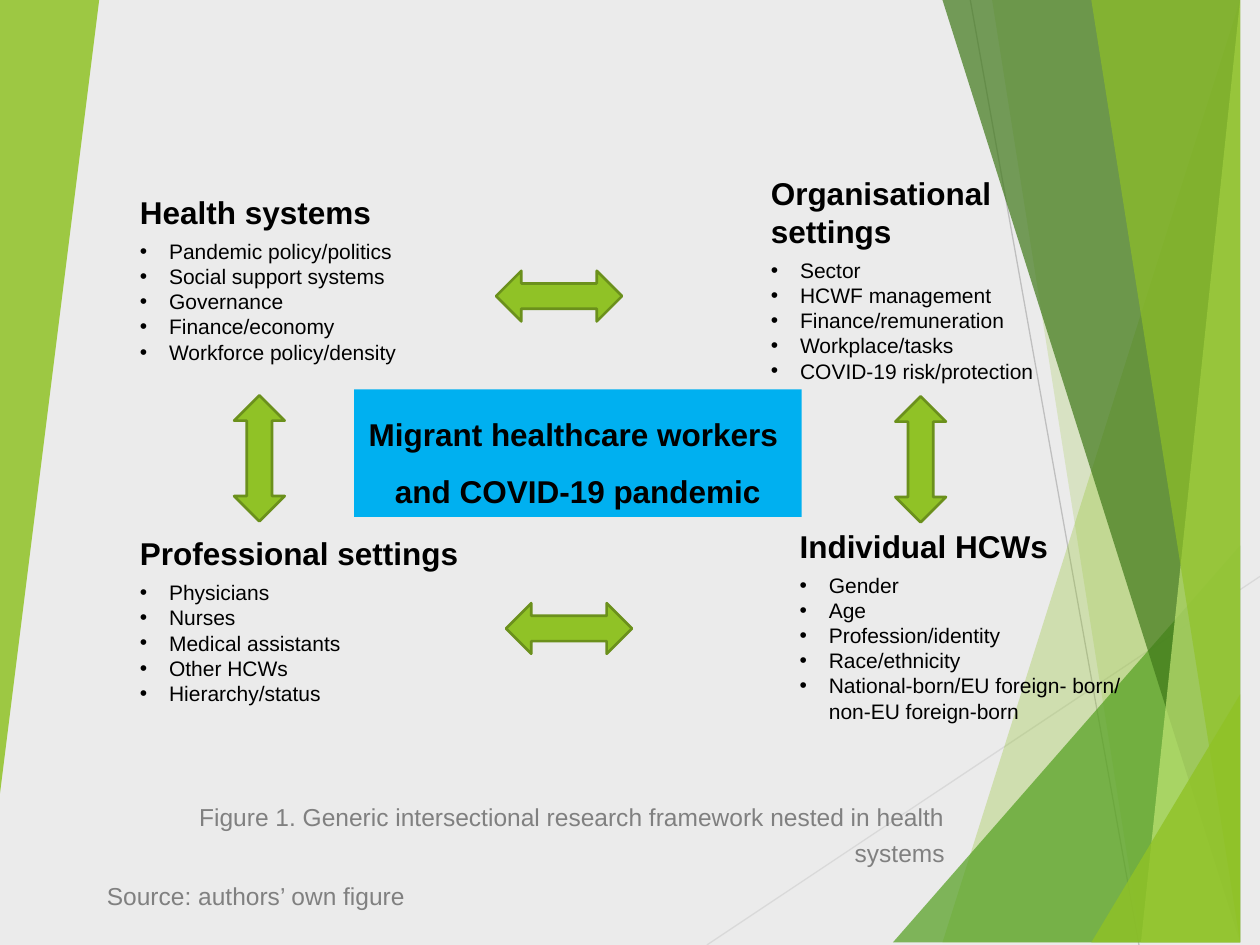
"""Build the slide showing the framework for migrant healthcare workers."""
import dataclasses

import lxml.etree
import pptx
import pptx.dml.color
import pptx.enum.shapes
import pptx.enum.text
import pptx.oxml.ns
import pptx.util

Cm = pptx.util.Cm
Pt = pptx.util.Pt
RGBColor = pptx.dml.color.RGBColor
SHAPE = pptx.enum.shapes.MSO_SHAPE
ALIGN = pptx.enum.text.PP_ALIGN
qn = pptx.oxml.ns.qn

WIDTH, HEIGHT = 25.4, 19.05


@dataclasses.dataclass(frozen=True)
class Theme:
    font: str = "Arial"
    heading_size: int = 18
    caption_size: int = 14
    list_size: int = 12
    line_width: float = 1.5
    hairline_width: float = 0.75
    background: str = "EBEBEB"
    text: str = "000000"
    caption: str = "808080"
    centre: str = "00B0F0"
    green: str = "90C226"
    green_outline: str = "6B901C"
    leaf: str = "54A021"
    forest: str = "3F7819"
    lime: str = "C0E474"
    light_line: str = "D9D9D9"
    mid_line: str = "BFBFBF"


class SlideBuilder:
    def __init__(self, slide, theme):
        self.slide = slide
        self.theme = theme
        self.decoration = slide.shapes.add_group_shape()
        slide.background.fill.solid()
        slide.background.fill.fore_color.rgb = RGBColor.from_string(theme.background)

    def paint(self, shape, color, opacity=100, outline=None):
        shape.shadow.inherit = False
        shape.fill.solid()
        shape.fill.fore_color.rgb = RGBColor.from_string(color)
        if opacity < 100:
            color_element = shape.element.spPr.find(qn("a:solidFill"))[0]
            alpha = lxml.etree.SubElement(color_element, qn("a:alpha"))
            alpha.set("val", str(opacity * 1000))
        if outline:
            shape.line.color.rgb = RGBColor.from_string(outline)
            shape.line.width = Pt(self.theme.line_width)
        else:
            shape.line.fill.background()

    def hairline(self, start, end, color):
        line = self.decoration.shapes.add_connector(
            pptx.enum.shapes.MSO_CONNECTOR.STRAIGHT, *map(Cm, start + end))
        line.line.color.rgb = RGBColor.from_string(color)
        line.line.width = Pt(self.theme.hairline_width)
        lxml.etree.SubElement(line.element.spPr, qn("a:effectLst"))

    def facet(self, points, color, opacity):
        builder = self.decoration.shapes.build_freeform(*points[0], scale=Cm(1))
        builder.add_line_segments(points[1:], close=True)
        self.paint(builder.convert_to_shape(), color, opacity)

    def add_text(self, paragraph, text, size, color, bold=False, **formats):
        run = paragraph.add_run()
        run.text = text
        font_formats = {"name": self.theme.font, "size": Pt(size), "bold": bold}
        for target, values in ((run.font, font_formats), (paragraph, formats)):
            for name, value in values.items():
                setattr(target, name, value)
        run.font.color.rgb = RGBColor.from_string(color)

    def bullet(self, paragraph):
        properties = paragraph._p.get_or_add_pPr()
        for name, value in {"marL": Cm(0.59), "indent": -Cm(0.59)}.items():
            properties.set(name, str(int(value)))
        lxml.etree.SubElement(properties, qn("a:buFont")).set("typeface", self.theme.font)
        lxml.etree.SubElement(properties, qn("a:buChar")).set("char", "•")

    def topic(self, box, heading, items):
        frame = self.slide.shapes.add_textbox(*map(Cm, box)).text_frame
        frame.word_wrap = True
        frame.auto_size = pptx.enum.text.MSO_AUTO_SIZE.SHAPE_TO_FIT_TEXT
        theme = self.theme
        self.add_text(frame.paragraphs[0], heading, theme.heading_size, theme.text,
                      bold=True, space_after=Pt(4.5))
        for item in items:
            paragraph = frame.add_paragraph()
            self.add_text(paragraph, item, theme.list_size, theme.text)
            self.bullet(paragraph)

    def centre_box(self, box, lines):
        shape = self.slide.shapes.add_shape(SHAPE.RECTANGLE, *map(Cm, box))
        self.paint(shape, self.theme.centre)
        frame = shape.text_frame
        frame.word_wrap = False
        frame.auto_size = pptx.enum.text.MSO_AUTO_SIZE.SHAPE_TO_FIT_TEXT
        for index, line in enumerate(lines):
            paragraph = frame.add_paragraph() if index else frame.paragraphs[0]
            self.add_text(paragraph, line, self.theme.heading_size, self.theme.text,
                          bold=True, alignment=ALIGN.CENTER, line_spacing=1.5)

    def arrow(self, kind, left, top):
        size = (1.02, 2.54) if kind == SHAPE.UP_DOWN_ARROW else (2.54, 1.02)
        shape = self.slide.shapes.add_shape(kind, *map(Cm, (left, top) + size))
        self.paint(shape, self.theme.green, outline=self.theme.green_outline)

    def caption(self, box, lines):
        title, subtitle = self.slide.placeholders
        title.element.getparent().remove(title.element)
        subtitle.element.getparent().append(subtitle.element)
        for name, value in zip(("left", "top", "width", "height"), box):
            setattr(subtitle, name, Cm(value))
        frame = subtitle.text_frame
        frame.vertical_anchor = pptx.enum.text.MSO_ANCHOR.TOP
        for index, (line, alignment) in enumerate(lines):
            paragraph = frame.add_paragraph() if index else frame.paragraphs[0]
            self.add_text(paragraph, line, self.theme.caption_size, self.theme.caption,
                          alignment=alignment, line_spacing=1.2,
                          space_before=Pt(0), space_after=Pt(4.5))


def right_band(top_x, bottom_x):
    return [(top_x, 0), (bottom_x, HEIGHT), (WIDTH, HEIGHT), (WIDTH, 0)]


def right_corner(left, top):
    return [(left, HEIGHT), (WIDTH, top), (WIDTH, HEIGHT)]


def main():
    theme = Theme()
    presentation = pptx.Presentation()
    presentation.slide_width, presentation.slide_height = Cm(WIDTH), Cm(HEIGHT)
    slide = presentation.slides.add_slide(presentation.slide_layouts[0])
    builder = SlideBuilder(slide, theme)

    builder.hairline((14.25, HEIGHT), (WIDTH, 11.62), theme.light_line)
    builder.hairline((19.56, 0), (22.96, HEIGHT), theme.mid_line)
    for points, color, opacity in (
        (right_band(24.77, 19.15), theme.green, 30),
        (right_band(20.02, 23.34), theme.green, 20),
        (right_corner(18.44, 10.9), theme.leaf, 72),
        (right_band(19.48, 24.64), theme.forest, 70),
        (right_band(24.92, 23.04), theme.lime, 70),
        (right_band(22.43, 25.04), theme.green, 65),
        (right_corner(22.38, 13.59), theme.green, 80),
        ([(0, 0), (2.38, 0), (0, 15.65)], theme.green, 85),
    ):
        builder.facet(points, color, opacity)

    builder.caption((1.9, 15.93, 17.4, 2.39), (
        ("Figure 1. Generic intersectional research framework nested in health systems",
         ALIGN.RIGHT),
        ("Source: authors’ own figure", ALIGN.LEFT)))
    builder.centre_box((7.14, 7.85, 9.02, 2.57),
                       ("Migrant healthcare workers ", "and COVID-19 pandemic"))

    for box, heading, items in (
        ((15.29, 3.38, 6.86, 4.55), "Organisational settings",
         ("Sector", "HCWF management", "Finance/remuneration", "Workplace/tasks",
          "COVID-19 risk/protection")),
        ((15.87, 10.49, 7.26, 4.29), "Individual HCWs",
         ("Gender", "Age", "Profession/identity", "Race/ethnicity",
          "National-born/EU foreign- born/ non-EU foreign-born")),
        ((2.57, 3.76, 7.32, 3.76), "Health systems",
         ("Pandemic policy/politics", "Social support systems", "Governance",
          "Finance/economy", "Workforce policy/density")),
        ((2.57, 10.64, 7.04, 3.76), "Professional settings",
         ("Physicians", "Nurses", "Medical assistants", "Other HCWs", "Hierarchy/status")),
    ):
        builder.topic(box, heading, items)

    for kind, left, top in (
        (SHAPE.UP_DOWN_ARROW, 18.05, 7.99),
        (SHAPE.UP_DOWN_ARROW, 4.72, 7.97),
        (SHAPE.LEFT_RIGHT_ARROW, 10.2, 12.16),
        (SHAPE.LEFT_RIGHT_ARROW, 10, 5.46),
    ):
        builder.arrow(kind, left, top)

    presentation.save("out.pptx")


if __name__ == "__main__":
    main()
